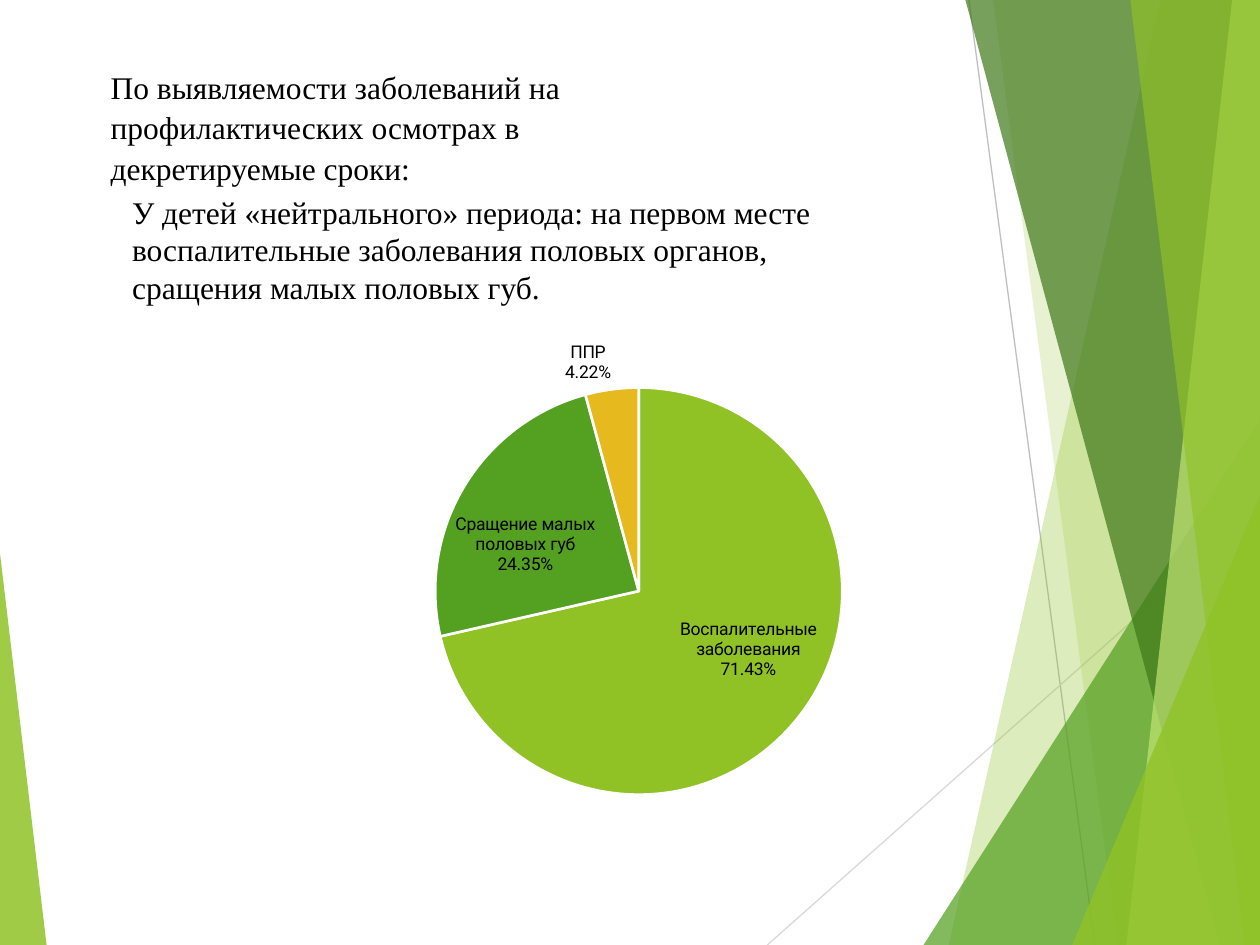
from dataclasses import dataclass

from lxml import etree
from pptx import Presentation
from pptx.chart.data import CategoryChartData
from pptx.dml.color import RGBColor
from pptx.enum.chart import XL_CHART_TYPE, XL_LABEL_POSITION
from pptx.enum.shapes import MSO_CONNECTOR, MSO_SHAPE
from pptx.enum.text import MSO_AUTO_SIZE
from pptx.oxml import parse_xml
from pptx.oxml.ns import nsdecls, qn
from pptx.util import Inches, Pt

PIE = XL_CHART_TYPE.PIE
BEST_FIT = XL_LABEL_POSITION.BEST_FIT
STRAIGHT = MSO_CONNECTOR.STRAIGHT
TRIANGLE = MSO_SHAPE.ISOSCELES_TRIANGLE
GROW = MSO_AUTO_SIZE.SHAPE_TO_FIT_TEXT

WIDTH, HEIGHT = 10, 7.5
BLEED = -0.01


@dataclass(frozen=True)
class Theme:
    lime: str = "90C226"
    green: str = "54A021"
    forest: str = "3F7819"
    pale: str = "C0E474"
    gold: str = "E6B91E"
    ink: str = "000000"
    white: str = "FFFFFF"
    dark_rule: str = "BFBFBF"
    light_rule: str = "D9D9D9"
    text_font: str = "Times New Roman"
    chart_font: str = "Roboto"
    text_size: float = 18
    chart_size: float = 10
    rule_width: float = 0.75


@dataclass(frozen=True)
class Rule:
    start: tuple[float, float]
    end: tuple[float, float]
    color: str


@dataclass(frozen=True)
class Band:
    top_left: float
    bottom_left: float
    color: str
    opacity: int


@dataclass(frozen=True)
class Corner:
    left: float
    top: float
    width: float
    apex: float
    color: str
    opacity: int


@dataclass(frozen=True)
class Note:
    text: str
    box: tuple[float, float, float, float]
    indent: float = 0
    line_spacing: float = 1.0
    space_after: float = 0


@dataclass(frozen=True)
class Slice:
    label: str
    percent: float
    color: str


THEME = Theme()

RULES = [
    Rule((7.69, 0), (8.69, HEIGHT), THEME.dark_rule),
    Rule((WIDTH, 4.03), (6.09, HEIGHT), THEME.light_rule),
]
PANES = [
    Band(9.21, 7.53, THEME.lime, 30),
    Band(7.88, 8.87, THEME.lime, 20),
    Corner(7.33, 3.33, 2.67, 1, THEME.green, 72),
    Band(7.66, 9.68, THEME.forest, 70),
    Band(9.78, 8.94, THEME.pale, 70),
    Band(8.97, 9.88, THEME.lime, 65),
    Corner(8.51, 3.93, 1.49, 1, THEME.lime, 80),
    Corner(0, 4.39, 0.37, 0, THEME.lime, 85),
]
NOTES = [
    Note("По выявляемости заболеваний на профилактических осмотрах в декретируемые сроки:",
         (0.28, 0.47, 5, 1.07), 0.5, 1.07, 8),
    Note("У детей «нейтрального» периода: на первом месте воспалительные заболевания "
         "половых органов, сращения малых половых губ.", (0.95, 1.48, 6.05, 1.01)),
]
SLICES = [
    Slice("Воспалительные заболевания", 71.43, THEME.lime),
    Slice("Сращение малых половых губ", 24.35, THEME.green),
    Slice("ППР", 4.22, THEME.gold),
]
CHART_BOX = (3.24, 2.27, 5.94, 4.64)
PLOT_AREA = {"x": 0.036, "y": 0.114, "w": 0.544, "h": 0.816}


def rgb(color: str) -> RGBColor:
    return RGBColor.from_string(color)


def draw_rule(page, rule: Rule) -> None:
    line = page.shapes.add_connector(STRAIGHT, *map(Inches, rule.start + rule.end))
    line.line.color.rgb = rgb(rule.color)
    line.line.width = Pt(THEME.rule_width)
    etree.SubElement(line._element.spPr, qn("a:effectLst"))


def draw_pane(page, pane: Band | Corner) -> None:
    if isinstance(pane, Band):
        points = [(pane.top_left, BLEED), (WIDTH, BLEED), (WIDTH, HEIGHT),
                  (pane.bottom_left, HEIGHT)]
        corners = [(Inches(x), Inches(y)) for x, y in points]
        builder = page.shapes.build_freeform(*corners[0])
        builder.add_line_segments(corners[1:], close=True)
        shape = builder.convert_to_shape()
    else:
        box = (pane.left, pane.top, pane.width, HEIGHT - pane.top)
        shape = page.shapes.add_shape(TRIANGLE, *map(Inches, box))
        shape.adjustments[0] = pane.apex
    shape.shadow.inherit = False
    shape.line.fill.background()
    shape.fill.solid()
    shape.fill.fore_color.rgb = rgb(pane.color)
    color = shape._element.spPr.find(qn("a:solidFill"))[0]
    etree.SubElement(color, qn("a:alpha"), val=str(pane.opacity * 1000))


def draw_note(page, note: Note) -> None:
    frame = page.shapes.add_textbox(*map(Inches, note.box)).text_frame
    frame.word_wrap = True
    frame.auto_size = GROW
    para = frame.paragraphs[0]
    para.text = note.text
    para.line_spacing = note.line_spacing
    para.space_after = Pt(note.space_after)
    para._p.get_or_add_pPr().set("marL", str(Inches(note.indent)))
    para.font.name = THEME.text_font
    para.font.size = Pt(THEME.text_size)
    para.font.color.rgb = rgb(THEME.ink)


def place_plot(chart) -> None:
    sizes = "".join(f'<c:{key} val="{value}"/>' for key, value in PLOT_AREA.items())
    layout = parse_xml(
        f'<c:layout {nsdecls("c")}><c:manualLayout><c:layoutTarget val="inner"/>'
        f'<c:xMode val="edge"/><c:yMode val="edge"/>{sizes}</c:manualLayout></c:layout>')
    plot_area = chart._chartSpace.chart.plotArea
    for old in plot_area.findall(qn("c:layout")):
        plot_area.remove(old)
    plot_area.insert(0, layout)


def draw_pie(page, slices: list[Slice]) -> None:
    data = CategoryChartData()
    data.categories = [item.label for item in slices]
    data.add_series("Series 1", [item.percent for item in slices])
    chart = page.shapes.add_chart(PIE, *map(Inches, CHART_BOX), data).chart
    chart.has_legend = False
    chart.has_title = False
    chart.font.name = THEME.chart_font
    chart.font.size = Pt(THEME.chart_size)
    chart.font.color.rgb = rgb(THEME.ink)
    place_plot(chart)
    plot = chart.plots[0]
    plot.vary_by_categories = True
    for index, item in enumerate(slices):
        style = plot.series[0].points[index].format
        style.fill.solid()
        style.fill.fore_color.rgb = rgb(item.color)
        style.line.color.rgb = rgb(THEME.white)
        style.line.width = Pt(1.5)
    labels = plot.series[0].data_labels
    labels.show_value = False
    labels.show_category_name = True
    labels.show_percentage = True
    labels.number_format = "0.00%"
    labels.number_format_is_linked = False
    labels.position = BEST_FIT


def main() -> None:
    deck = Presentation()
    deck.slide_width, deck.slide_height = Inches(WIDTH), Inches(HEIGHT)
    page = deck.slides.add_slide(deck.slide_layouts[6])
    for rule in RULES:
        draw_rule(page, rule)
    for pane in PANES:
        draw_pane(page, pane)
    for note in NOTES:
        draw_note(page, note)
    draw_pie(page, SLICES)
    deck.save("out.pptx")


if __name__ == "__main__":
    main()
